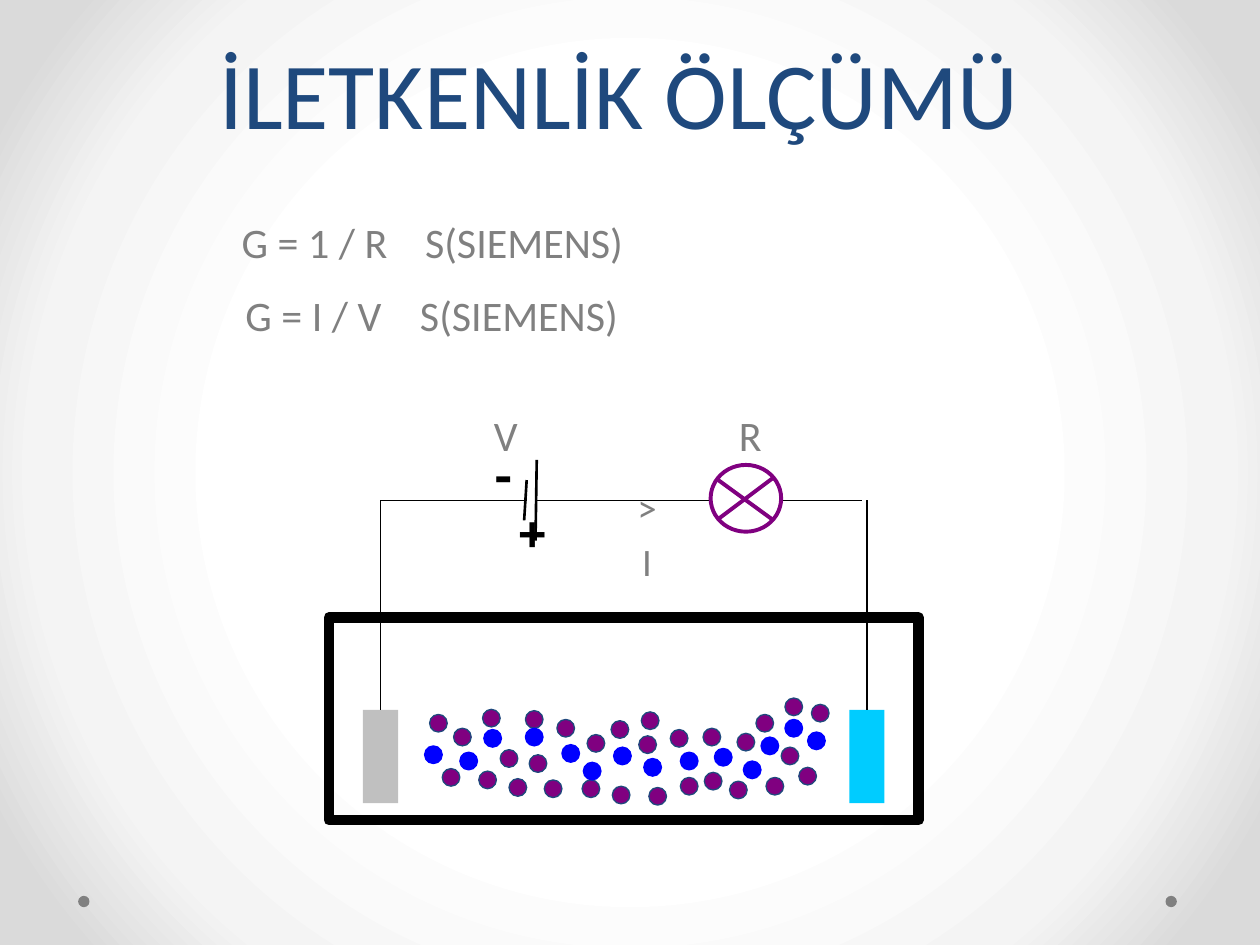
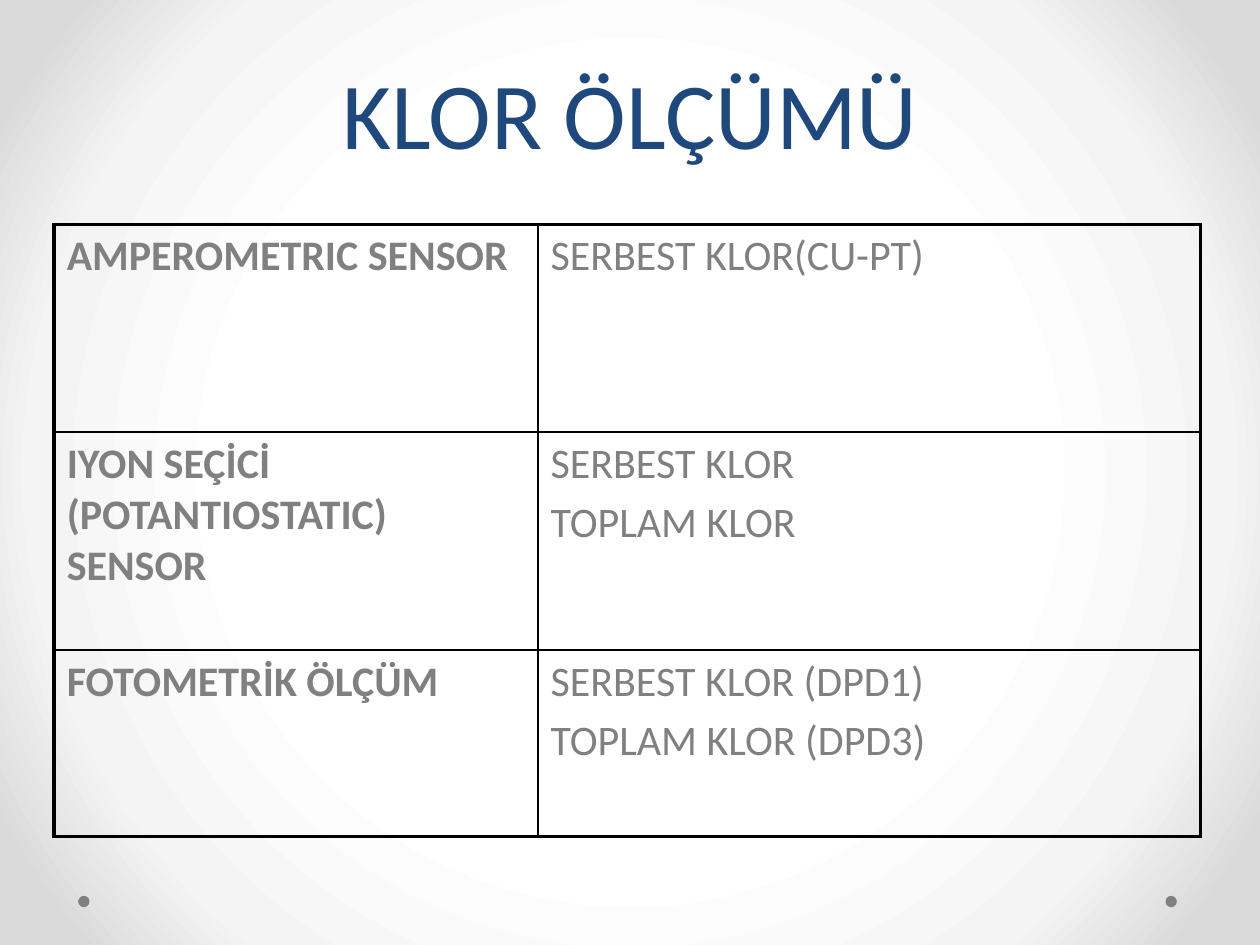
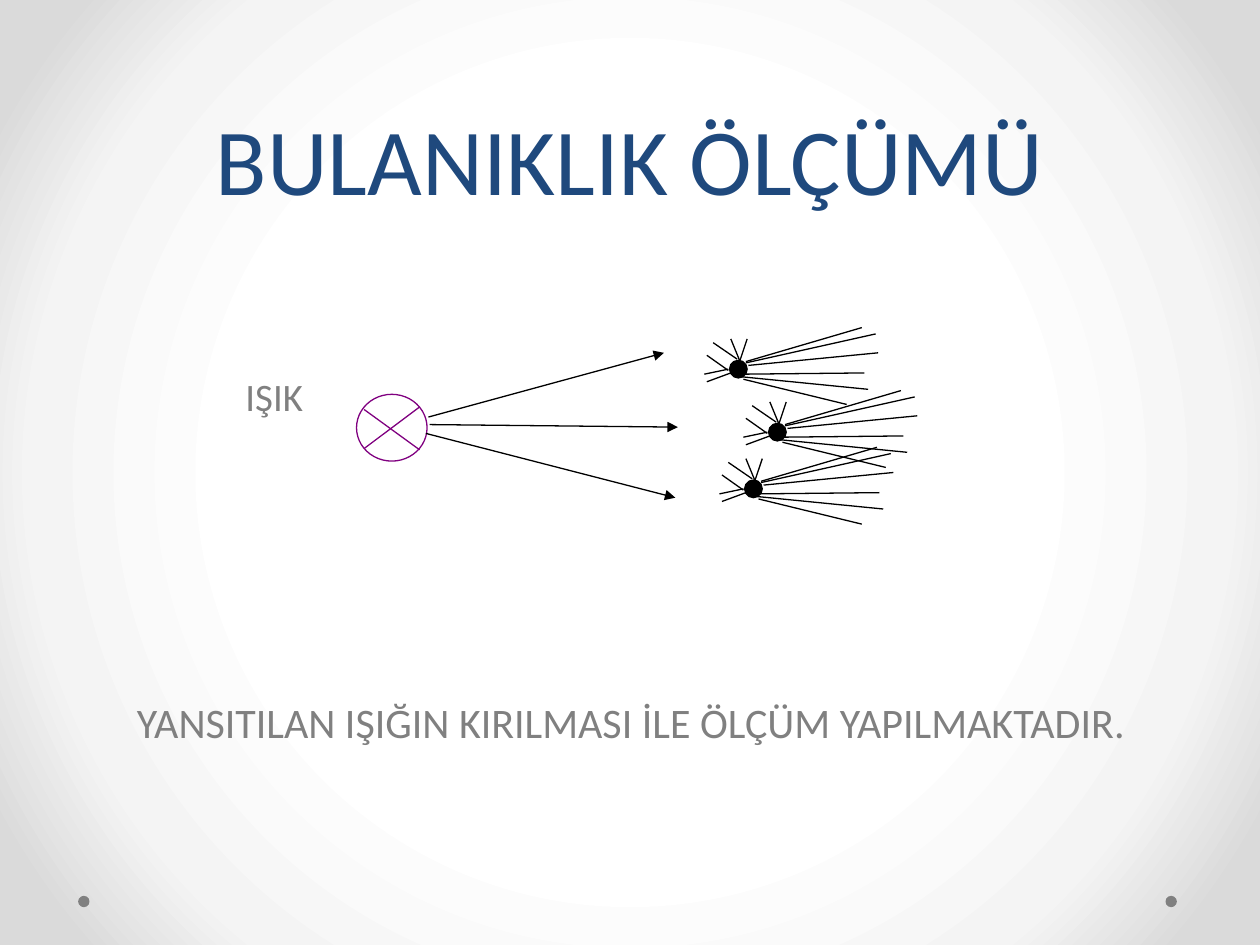
from pptx import Presentation
from pptx.dml.color import RGBColor
from pptx.enum.shapes import MSO_CONNECTOR as LINK, MSO_SHAPE as FORM
from pptx.enum.text import MSO_ANCHOR as ANCHOR, PP_ALIGN as ALIGN
from pptx.oxml import parse_xml
from pptx.oxml.ns import nsdecls, qn
from pptx.util import Emu, Pt
from lxml.etree import SubElement

HUES = {"title": "1F497D", "text": "808080", "ink": "000000", "lamp": "800080",
        "ion": "0000FF", "silver": "C0C0C0", "cyan": "00CCFF"}
GLOW = [(50, "FFFFFF"), (76, "F4F4F4"), (92, "DADADA")]
COLS, ROWS = 100, 75
CELL = 91440  # one grid cell, a hundredth of the slide's width

# Grid places relative to the tank's corner
SALTS = [(15.6, 7.4), (13.6, 10.5), (20.5, 9.3), (15.9, 10.9), (27.9, 12.7),
         (27.1, 8.9), (24.6, 9.4), (32.4, 9.2), (29.8, 12.3), (38.3, 6.9),
         (35.9, 10.3), (9.9, 8.8), (9, 12), (12.2, 7.3), (8, 7.7),
         (24.8, 7.5), (22.4, 8.2), (18.1, 8.1), (17.1, 12.9), (14.3, 12.8),
         (11.9, 12.2), (25.4, 13.5), (22.5, 13.4), (20.1, 12.9), (33.9, 7.7),
         (36.2, 6.4), (29.7, 8.8), (37.3, 11.9), (34.7, 12.7), (31.8, 13)]
IONS = [(12.3, 8.9), (15.6, 8.8), (18.5, 10.1), (20.2, 11.5), (25, 11.2),
        (30.6, 10.4), (32.9, 11.4), (36.2, 8.1), (38, 9.1), (7.6, 10.2),
        (34.3, 9.5), (22.6, 10.3), (27.9, 10.7), (10.4, 10.7)]
# Start and end of each ray relative to the speck's corner
RAYS = [((1.3, 0.2), (11.6, -2.1)), ((1.5, 0.4), (11.8, -0.6)),
        ((0.8, 0), (0.1, -1.7)), ((1.3, 0.1), (10.5, -2.6)),
        ((0.6, -0.1), (-1.3, -1.4)), ((0.8, 0.1), (1.4, -1.7)),
        ((-0.1, 0.7), (-2, 1.1)), ((0.1, 1), (-1.8, 1.7)),
        ((-0.1, 0.8), (-1.8, -0.4)), ((0.9, 1.3), (11, 2.3)),
        ((1.1, 1.5), (9.3, 3.5)), ((1, 1.1), (10.7, 1))]
GRADES = [("AMPEROMETRIC SENSOR", ["SERBEST KLOR(CU-PT)"]),
          ("IYON SEÇİCİ (POTANTIOSTATIC) SENSOR", ["SERBEST KLOR", "TOPLAM KLOR"]),
          ("FOTOMETRİK ÖLÇÜM", ["SERBEST KLOR (DPD1)", "TOPLAM KLOR (DPD3)"])]


def grid(*cells):
    return [Emu(round(cell * CELL)) for cell in cells]


def shift(box, x, y):
    return box[0] + x, box[1] + y


def color(name):
    return RGBColor.from_string(HUES[name])


def write(frame, lines, size=24, hue="text", font="Calibri", bold=False,
          align=ALIGN.LEFT, lead=None, gap=0.2):
    """Fill a text frame, one paragraph for each line; gap is a share of size."""
    frame.word_wrap = True
    for i, line in enumerate(lines):
        para = frame.paragraphs[0] if i == 0 else frame.add_paragraph()
        para.alignment = align
        para.space_before = Pt(size * gap)
        if lead:
            para.line_spacing = Pt(lead)
        run = para.add_run()
        run.text = line
        run.font.size, run.font.name, run.font.bold = Pt(size), font, bold
        run.font.color.rgb = color(hue)


def label(slide, box, *lines, anchor=ANCHOR.TOP, **style):
    frame = slide.shapes.add_textbox(*grid(*box)).text_frame
    frame.vertical_anchor = anchor
    write(frame, lines, **style)
    return frame


def shape(slide, form, box, fill=None, edge=None, width=0.75):
    item = slide.shapes.add_shape(form, *grid(*box))
    item.shadow.inherit = False
    if fill:
        item.fill.solid()
        item.fill.fore_color.rgb = color(fill)
    else:
        item.fill.background()
    if edge:
        item.line.color.rgb = color(edge)
        item.line.width = Pt(width)
    else:
        item.line.fill.background()
    return item


def line(slide, start, end, hue="ink", width=0.75, arrow=False, root=None):
    """Draw a line; root is a rectangle whose top side it leaves from."""
    link = slide.shapes.add_connector(LINK.STRAIGHT, *grid(*start, *end))
    if root is not None:
        link.begin_connect(root, 0)
    link.line.color.rgb = color(hue)
    link.line.width = Pt(width)
    if arrow:
        SubElement(link.line._get_or_add_ln(), qn("a:tailEnd"), type="triangle")
    SubElement(link._element.spPr, qn("a:effectLst"))


def backdrop(master):
    master.background.fill.solid()
    stops = "".join(f'<a:gs pos="{pos}000"><a:srgbClr val="{hue}"/></a:gs>'
                    for pos, hue in GLOW)
    fill = parse_xml(
        f'<a:gradFill {nsdecls("a")} rotWithShape="1"><a:gsLst>{stops}</a:gsLst>'
        '<a:path path="circle"><a:fillToRect l="50000" t="50000" r="50000" b="50000"/>'
        '</a:path></a:gradFill>')
    base = master.element.find(".//" + qn("p:bgPr"))
    base.replace(base[0], fill)


def page(deck, title, top, height):
    slide = deck.slides.add_slide(deck.slide_layouts[6])
    for x in (92.5, 6.2):
        shape(slide, FORM.OVAL, (x, 71.1, 0.9, 0.9), "text")
    label(slide, (5, top, 90, height), title, size=54, hue="title", lead=58,
          gap=0, align=ALIGN.CENTER, anchor=ANCHOR.BOTTOM)
    return slide


def formula(slide, box, left, right, stop):
    """Write two parts of a formula, the second one at a tab stop."""
    frame = label(slide, box, f"{left}\t{right}")
    tabs = SubElement(frame.paragraphs[0]._p.get_or_add_pPr(), qn("a:tabLst"))
    SubElement(tabs, qn("a:tab"), pos=str(grid(stop)[0]), algn="l")


def lamp(slide, box, width):
    shape(slide, FORM.OVAL, (*box, 5.6, 5.3), edge="lamp", width=width)
    for start, end in (((5, 1), (0.6, 4.3)), ((5, 4.4), (0.6, 1.2))):
        line(slide, shift(box, *start), shift(box, *end), "lamp", width)


def tank(slide, box):
    """Draw the vessel with its particles and return both electrodes."""
    shape(slide, FORM.RECTANGLE, (*box, 46.8, 16.1), edge="ink", width=6)
    rods = [shape(slide, FORM.RECTANGLE, (*shift(box, x, 7.35), 2.8, 7.4), hue)
            for x, hue in ((2.7, "silver"), (41.3, "cyan"))]
    for spots, fill, edge in ((SALTS, "lamp", "title"), (IONS, "ion", "ion")):
        for spot in spots:
            shape(slide, FORM.OVAL, (*shift(box, *spot), 1.4, 1.4), fill, edge)
    return rods


def circuit(slide, box, rods):
    """Wire the electrodes to the cell and the lamp; box starts at the left wire."""
    for rod, x in zip(rods, (0, 38.6)):
        line(slide, shift(box, x, 16.6), shift(box, x, 0), root=rod)
    for start, end in ((0, 11.6), (12.4, 26.2), (31.8, 38.2)):
        line(slide, shift(box, start, 0), shift(box, end, 0))
    for start, end in (((11.4, 1.6), (11.6, -1.6)), ((12.3, 3.2), (12.4, -3.2))):
        line(slide, shift(box, *start), shift(box, *end), width=1.5)
    lamp(slide, shift(box, 26.2, -2.8), 2.25)
    poles = label(slide, (*shift(box, 7.6, -5), 10.8, 9), "-", "+", size=28,
                  hue="ink", font="Courier New", bold=True, gap=0)
    poles.paragraphs[1]._p.get_or_add_pPr().set("marL", str(grid(2.3)[0]))
    for x, name in ((6.4, "V"), (25.8, "R")):
        label(slide, (*shift(box, x, -7.7), 7.1, 5.8), name, align=ALIGN.CENTER)
    label(slide, (*shift(box, 17.6, -1.8), 7.1, 8.3), ">", "I", size=22.2,
          align=ALIGN.CENTER)


def border(cell, **widths):
    props = cell._tc.get_or_add_tcPr()
    for i, (side, width) in enumerate(widths.items()):
        props.insert(i, parse_xml(
            f'<a:{side} {nsdecls("a")} w="{Pt(width)}"><a:solidFill>'
            f'<a:srgbClr val="{HUES["ink"]}"/></a:solidFill></a:{side}>'))


def chart(slide, box, cols, rows):
    table = slide.shapes.add_table(len(rows), len(cols), *grid(*box)).table
    table.first_row = table.horz_banding = False
    for col, width in zip(table.columns, grid(*cols)):
        col.width = width
    for row, height in zip(table.rows, grid(*rows)):
        row.height = height
    outer, inner = 2.25, 1
    for i, (name, kinds) in enumerate(GRADES):
        for j, lines in enumerate(([name], kinds)):
            cell = table.cell(i, j)
            cell.fill.background()
            write(cell.text_frame, lines, bold=j == 0)
            border(cell, lnL=inner if j else outer, lnR=outer if j else inner,
                   lnT=inner if i else outer,
                   lnB=outer if i == len(rows) - 1 else inner)


def speck(slide, box):
    shape(slide, FORM.OVAL, (*box, 1.4, 1.4), "ink", "ink")
    for start, end in RAYS:
        line(slide, shift(box, *start), shift(box, *end))


def scatter(slide, box):
    """Draw the lamp, its beams and the specks; box starts at the lamp."""
    lamp(slide, box, 0.75)
    for start, end in (((5.7, 1.8), (24.4, -3.3)), ((5.8, 2.4), (25.5, 2.6)),
                       ((5.5, 3.1), (25.3, 8.2))):
        line(slide, shift(box, *start), shift(box, *end), arrow=True)
    for spot in ((32.7, 2.3), (29.6, -2.7), (30.8, 6.8)):
        speck(slide, shift(box, *spot))
    label(slide, (*shift(box, -9.8, -2.2), 8, 4.2), "IŞIK", size=22.2)


def main():
    deck = Presentation()
    deck.slide_width, deck.slide_height = grid(COLS, ROWS)
    backdrop(deck.slide_master)

    slide = page(deck, "İLETKENLİK ÖLÇÜMÜ ", 1.3, 11)
    formula(slide, (18.2, 16.7, 46, 5.8), "G = 1 / R", "S(SIEMENS)", 14.55)
    formula(slide, (18.5, 22.5, 46, 5.8), "G = I / V", "S(SIEMENS)", 13.85)
    circuit(slide, (30.2, 39.7), tank(slide, (26.1, 49)))

    slide = page(deck, "KLOR ÖLÇÜMÜ", 1.3, 12.6)
    chart(slide, (4.3, 17.8, 91, 48.6), (38.4, 52.6), (16.5, 17.3, 14.8))

    slide = page(deck, "BULANIKLIK ÖLÇÜMÜ", 0, 17.5)
    scatter(slide, (28.3, 31.3))
    label(slide, (5.1, 54.8, 90, 4.7),
          "YANSITILAN IŞIĞIN KIRILMASI İLE ÖLÇÜM YAPILMAKTADIR.",
          align=ALIGN.CENTER)
    deck.save("out.pptx")


if __name__ == "__main__":
    main()
